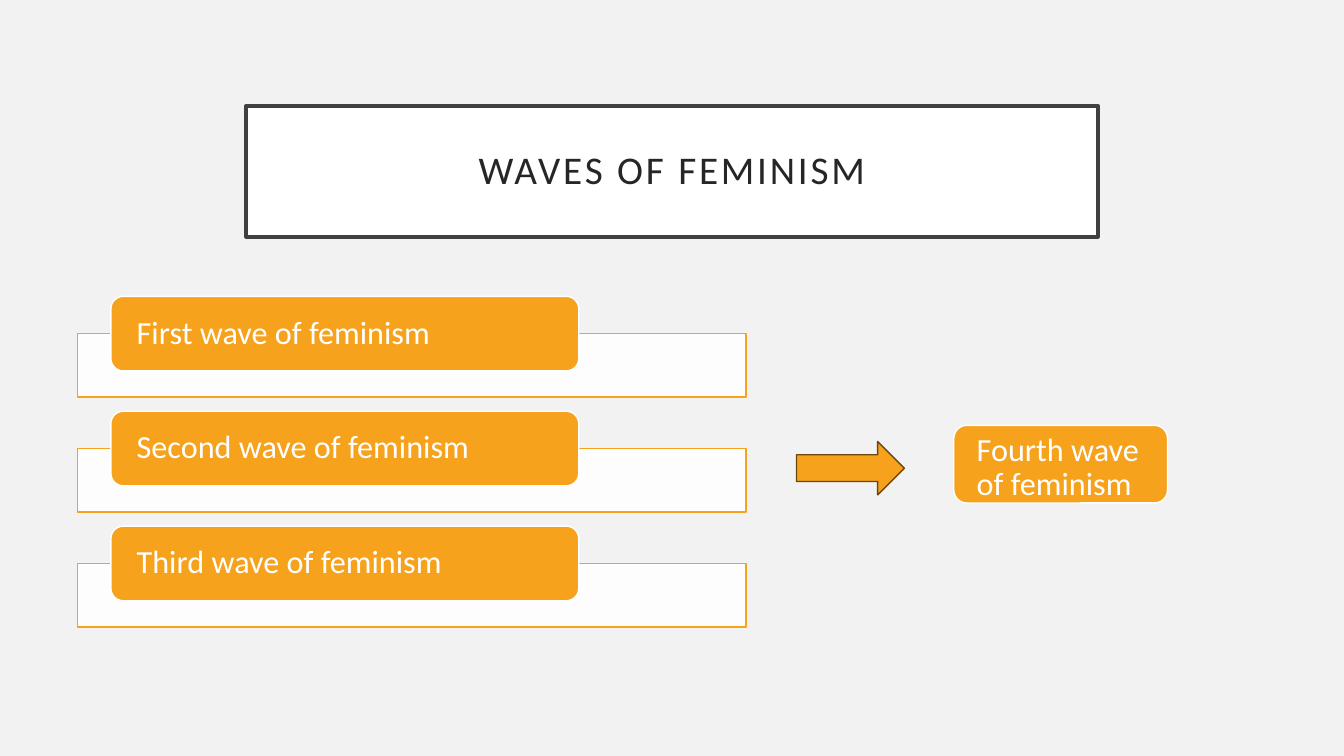
from dataclasses import dataclass

from lxml import etree
from pptx import Presentation
from pptx.dml.color import RGBColor
from pptx.enum.shapes import MSO_SHAPE
from pptx.enum.text import MSO_ANCHOR, PP_ALIGN
from pptx.oxml.ns import qn
from pptx.util import Inches, Pt

RECTANGLE = MSO_SHAPE.RECTANGLE
ROUNDED = MSO_SHAPE.ROUNDED_RECTANGLE
ARROW = MSO_SHAPE.RIGHT_ARROW
MIDDLE = MSO_ANCHOR.MIDDLE
LEFT = PP_ALIGN.LEFT
CENTER = PP_ALIGN.CENTER


@dataclass(frozen=True)
class Theme:
    font: str = "Calibri"
    title_size: float = 28
    label_size: float = 23
    background: str = "F2F2F2"
    white: str = "FFFFFF"
    frame: str = "404040"
    title_ink: str = "262626"
    accent: str = "F6A21D"
    arrow_line: str = "6C470D"


THEME = Theme()
WAVES = ["First wave of feminism", "Second wave of feminism", "Third wave of feminism"]
WAVE_PITCH = 1.14


def add_box(page, kind, box, fill, line, line_width=1):
    shape = page.shapes.add_shape(kind, *map(Inches, box))
    shape.shadow.inherit = False
    shape.fill.solid()
    shape.fill.fore_color.rgb = RGBColor.from_string(fill)
    shape.line.color.rgb = RGBColor.from_string(line)
    shape.line.width = Pt(line_width)
    return shape


def write_text(shape, text, size, color, align, insets):
    frame = shape.text_frame
    frame.word_wrap = True
    frame.vertical_anchor = MIDDLE
    (frame.margin_left, frame.margin_top,
     frame.margin_right, frame.margin_bottom) = map(Inches, insets)
    para = frame.paragraphs[0]
    para.alignment = align
    para.line_spacing = 0.9
    para.font.name = THEME.font
    para.font.size = Pt(size)
    para.font.color.rgb = RGBColor.from_string(color)
    span = para.add_run()
    span.text = text
    return span


def add_title(page, box):
    shape = add_box(page, RECTANGLE, box, THEME.white, THEME.frame, 2.5)
    span = write_text(shape, "WAVES OF FEMINISM", THEME.title_size,
                      THEME.title_ink, CENTER, (0.2, 0.2, 0.2, 0.2))
    span.font._element.set("spc", "200")


def add_label(page, box, text, insets):
    shape = add_box(page, ROUNDED, box, THEME.accent, THEME.white)
    write_text(shape, text, THEME.label_size, THEME.white, LEFT, insets)


def add_wave(page, box, text):
    left, top, width, height = box
    panel = add_box(page, RECTANGLE, (left, top + 0.37, width, height - 0.37),
                    THEME.white, THEME.accent)
    color = panel.fill._xPr.find(qn("a:solidFill"))[0]
    etree.SubElement(color, qn("a:alpha"), val="90000")
    add_label(page, (left + 0.33, top, width * 0.7, 0.74), text, (0.22, 0, 0.22, 0))


def add_wave_list(page, box):
    left, top, width, height = box
    for index, text in enumerate(WAVES):
        add_wave(page, (left, top + index * WAVE_PITCH, width, height), text)


def add_next_wave(page, box):
    left, top, width, height = box
    add_box(page, ARROW, (left, top + 0.16, 1.07, 0.53), THEME.accent, THEME.arrow_line)
    add_label(page, (left + 1.56, top, width - 1.56, height),
              "Fourth wave of feminism", (0.19, 0.08, 0.19, 0))


def main():
    deck = Presentation()
    deck.slide_width = Inches(13.33)
    deck.slide_height = Inches(7.5)
    page = deck.slides.add_slide(deck.slide_layouts[6])
    page.background.fill.solid()
    page.background.fill.fore_color.rgb = RGBColor.from_string(THEME.background)
    add_title(page, (2.44, 1.05, 8.45, 1.3))
    add_wave_list(page, (0.77, 2.94, 6.63, 1))
    add_next_wave(page, (7.9, 4.22, 3.68, 0.77))
    deck.save("out.pptx")


if __name__ == "__main__":
    main()
